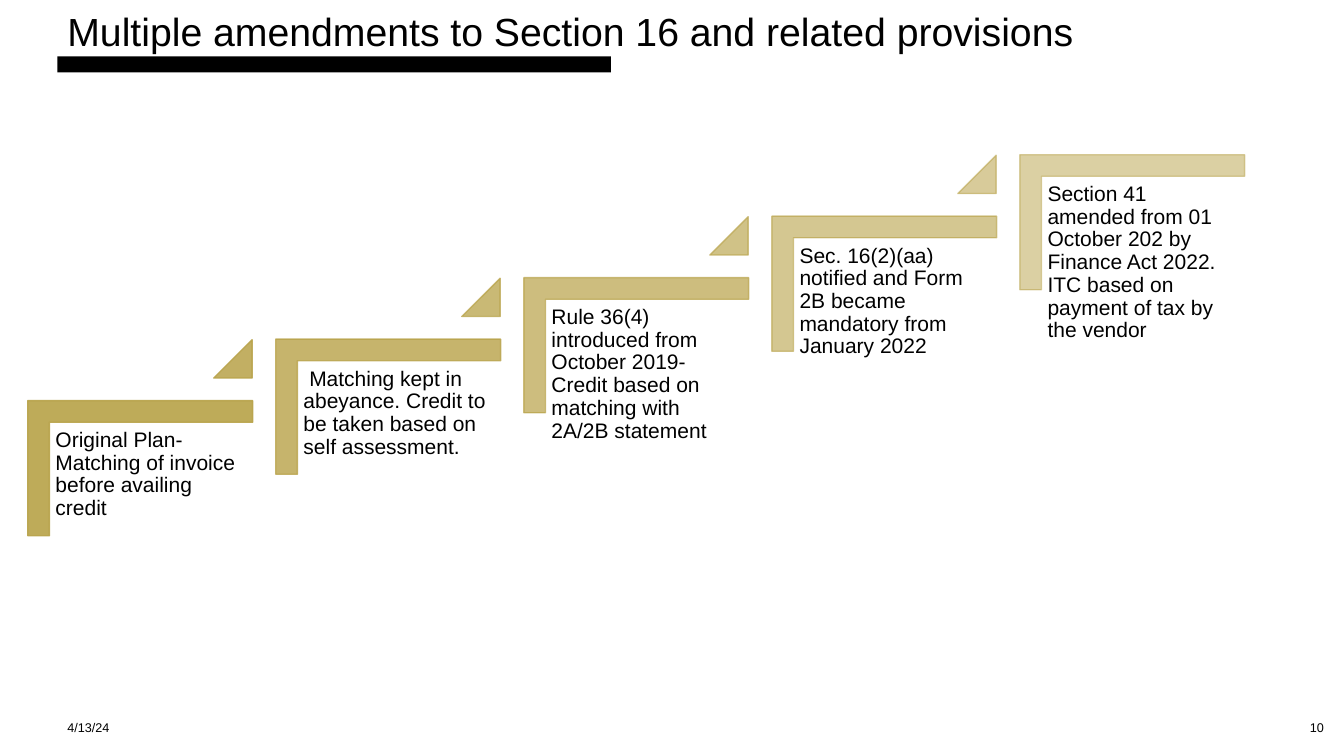
from lxml import etree
from pptx import Presentation
from pptx.dml.color import RGBColor
from pptx.enum.shapes import MSO_SHAPE
from pptx.enum.text import MSO_ANCHOR, PP_ALIGN
from pptx.oxml.ns import qn
from pptx.util import Inches, Pt

RECTANGLE = MSO_SHAPE.RECTANGLE
CORNER = MSO_SHAPE.CORNER
TRIANGLE = MSO_SHAPE.ISOSCELES_TRIANGLE
TOP, MIDDLE = MSO_ANCHOR.TOP, MSO_ANCHOR.MIDDLE
LEFT, RIGHT = PP_ALIGN.LEFT, PP_ALIGN.RIGHT

BLACK = "000000"
GOLD = "B8A248"
STEP_X, STEP_Y = 2.46, 0.61
STAGES = [
    "Original Plan- Matching of invoice before availing credit",
    " Matching kept in abeyance. Credit to be taken based on self assessment.",
    "Rule 36(4) introduced from October 2019- Credit based on matching with 2A/2B statement",
    "Sec. 16(2)(aa) notified and Form 2B became mandatory from January 2022",
    "Section 41 amended from 01 October 202 by Finance Act 2022. ITC based on payment of tax by the vendor",
]


def color(hex_code):
    return RGBColor.from_string(hex_code)


def set_opacity(fill, percent):
    srgb = fill._xPr.find(qn("a:solidFill")).find(qn("a:srgbClr"))
    etree.SubElement(srgb, qn("a:alpha")).set("val", str(percent * 1000))


def write(frame, text, size=15, align=LEFT, anchor=TOP, inset=None, spacing=None):
    frame.word_wrap = True
    frame.vertical_anchor = anchor
    if inset is not None:
        frame.margin_left = frame.margin_right = Inches(inset)
        frame.margin_top = frame.margin_bottom = Inches(inset)
    paragraph = frame.paragraphs[0]
    paragraph.alignment = align
    if spacing:
        paragraph.line_spacing = spacing
    run = paragraph.add_run()
    run.text = text
    run.font.name = "Arial"
    run.font.size = Pt(size)
    run.font.color.rgb = color(BLACK)


class StaircaseSlide:
    """Draws styled elements on one slide."""

    def __init__(self, slide):
        self.shapes = slide.shapes

    def label(self, text, left, top, width, height, **text_format):
        box = self.shapes.add_textbox(
            Inches(left), Inches(top), Inches(width), Inches(height))
        write(box.text_frame, text, **text_format)

    def block(self, preset, left, top, width, height, fill):
        block = self.shapes.add_shape(
            preset, Inches(left), Inches(top), Inches(width), Inches(height))
        block.shadow.inherit = False
        block.fill.solid()
        block.fill.fore_color.rgb = color(fill)
        block.line.fill.background()
        return block

    def gold_block(self, preset, left, top, width, height, opacity, adjustments):
        block = self.block(preset, left, top, width, height, GOLD)
        for index, value in enumerate(adjustments):
            block.adjustments[index] = value
        block.line.color.rgb = color(GOLD)
        block.line.width = Pt(1)
        set_opacity(block.fill, opacity)
        set_opacity(block.line.fill, opacity)
        return block

    def stage(self, index, text):
        dx, dy = index * STEP_X, index * STEP_Y
        opacity = 90 - 10 * index
        bracket = self.gold_block(
            CORNER, 0.72 + dx, 3.53 - dy, 1.34, 2.23, opacity, [0.16, 0.16])
        bracket.rotation = 90
        self.label(text, 0.49 + dx, 4.2 - dy, 2.01, 1.76, inset=0.06, spacing=0.9)
        if index < len(STAGES) - 1:
            self.gold_block(
                TRIANGLE, 2.12 + dx, 3.37 - dy, 0.38, 0.38, opacity - 5, [1])


def main():
    deck = Presentation()
    deck.slide_width, deck.slide_height = Inches(13.33), Inches(7.5)
    page = StaircaseSlide(deck.slides.add_slide(deck.slide_layouts[6]))
    page.block(RECTANGLE, 0.57, 0.56, 5.49, 0.16, BLACK)
    page.label("4/13/24", 0.57, 7.02, 3, 0.4, size=9, anchor=MIDDLE)
    page.label("Multiple amendments to Section 16 and related provisions",
               0.57, 0.11, 11.74, 0.4, size=28, anchor=MIDDLE)
    page.label("10", 12.53, 7.02, 0.7, 0.4, size=9, align=RIGHT, anchor=MIDDLE)
    for index, text in enumerate(STAGES):
        page.stage(index, text)
    deck.save("out.pptx")


if __name__ == "__main__":
    main()
